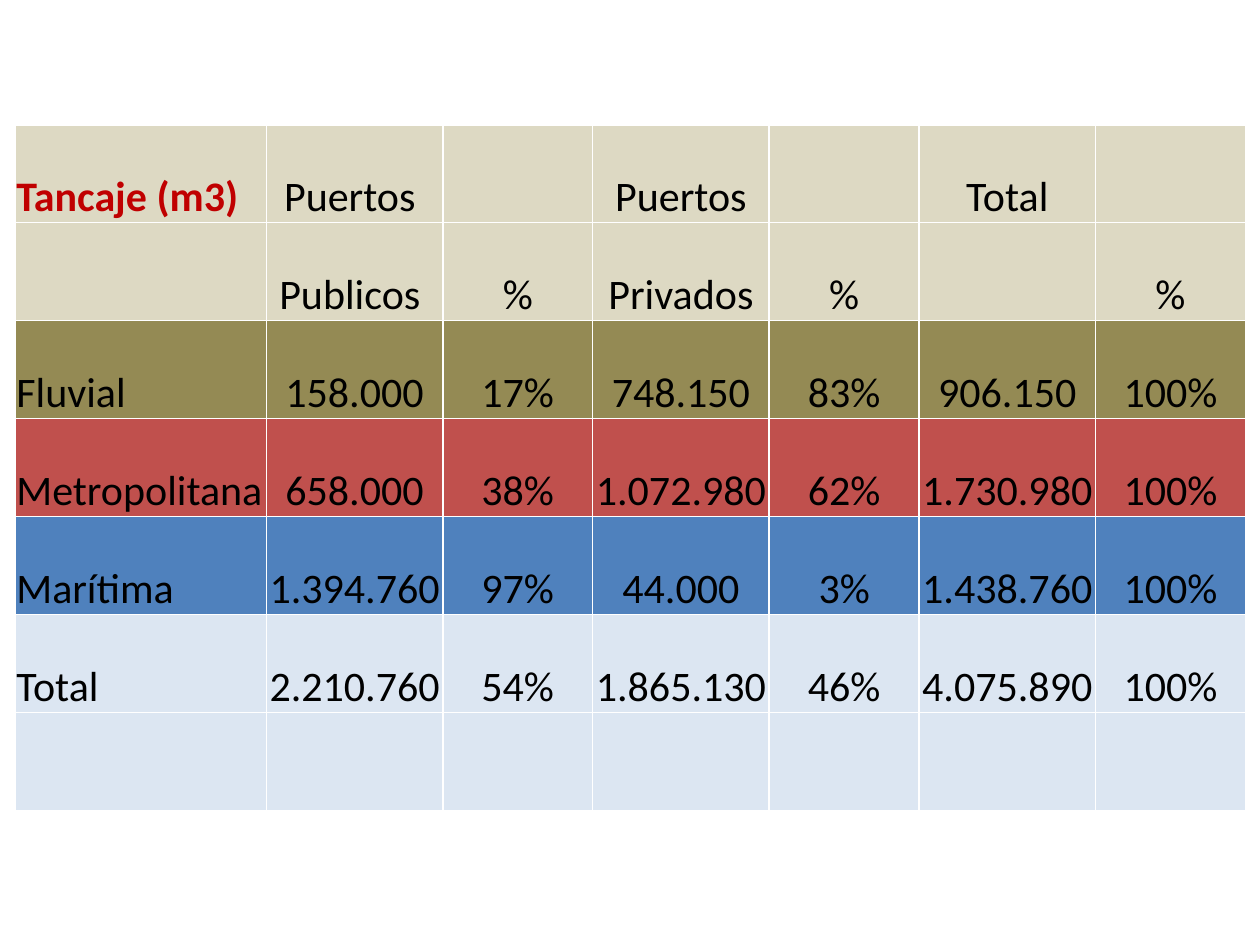
from dataclasses import dataclass

from lxml import etree
from pptx import Presentation
from pptx.dml.color import RGBColor
from pptx.enum.text import MSO_ANCHOR, PP_ALIGN
from pptx.oxml.ns import qn
from pptx.util import Pt

BOTTOM = MSO_ANCHOR.BOTTOM
LEFT = PP_ALIGN.LEFT
CENTER = PP_ALIGN.CENTER

BLANK_LAYOUT = 6
FONT_NAME = "Calibri"
FONT_SIZE = 24
WHITE = "FFFFFF"
BLACK = "000000"
RED = "C00000"
SAND = "DDD9C3"
PALE_BLUE = "DCE6F2"

TABLE_LEFT = 8.64
TABLE_TOP = 15.3
ROW_HEIGHT = 56
LABEL_WIDTH = 143.6
VALUE_WIDTH = 100.8
PERCENT_WIDTH = 85.7
COLUMN_WIDTHS = [LABEL_WIDTH] + [VALUE_WIDTH, PERCENT_WIDTH] * 3
CELL_MARGIN = 0.72
BORDER_WIDTH = 1


@dataclass
class TankRow:
    fill: str
    texts: tuple[str, ...] = ("",) * 7
    label_color: str = BLACK
    label_bold: bool = False


ROWS = [
    TankRow(WHITE),
    TankRow(SAND, ("Tancaje (m3)", "Puertos ", "", "Puertos", "", "Total", ""), RED, True),
    TankRow(SAND, ("", "Publicos ", "%", "Privados", "%", "", "%")),
    TankRow("948A54", ("Fluvial", "158.000", "17%", "748.150", "83%", "906.150", "100%")),
    TankRow("C0504D", ("Metropolitana", "658.000", "38%", "1.072.980", "62%", "1.730.980", "100%")),
    TankRow("4F81BD", ("Marítima", "1.394.760", "97%", "44.000", "3%", "1.438.760", "100%")),
    TankRow(PALE_BLUE, ("Total", "2.210.760", "54%", "1.865.130", "46%", "4.075.890", "100%")),
    TankRow(PALE_BLUE),
]


def rgb(color: str) -> RGBColor:
    return RGBColor.from_string(color)


def set_borders(cell, color: str) -> None:
    properties = cell._tc.get_or_add_tcPr()
    for position, side in enumerate(("a:lnL", "a:lnR", "a:lnT", "a:lnB")):
        line = etree.Element(qn(side), w=str(Pt(BORDER_WIDTH)))
        fill = etree.SubElement(line, qn("a:solidFill"))
        etree.SubElement(fill, qn("a:srgbClr"), val=color)
        properties.insert(position, line)


def format_cell(cell, text: str, fill: str, color: str, bold: bool, alignment: PP_ALIGN) -> None:
    cell.fill.solid()
    cell.fill.fore_color.rgb = rgb(fill)
    set_borders(cell, WHITE)
    cell.vertical_anchor = BOTTOM
    cell.margin_left = cell.margin_right = cell.margin_top = Pt(CELL_MARGIN)
    cell.margin_bottom = Pt(0)
    if not text:
        return
    cell.text_frame.text = text
    paragraph = cell.text_frame.paragraphs[0]
    paragraph.alignment = alignment
    font = paragraph.runs[0].font
    font.name = FONT_NAME
    font.size = Pt(FONT_SIZE)
    font.bold = bold
    font.color.rgb = rgb(color)


def add_tank_table(slide, rows: list[TankRow]) -> None:
    table = slide.shapes.add_table(
        len(rows), len(COLUMN_WIDTHS), Pt(TABLE_LEFT), Pt(TABLE_TOP),
        Pt(sum(COLUMN_WIDTHS)), Pt(ROW_HEIGHT * len(rows)),
    ).table
    table.first_row = False
    table.horz_banding = False
    for column, width in zip(table.columns, COLUMN_WIDTHS):
        column.width = Pt(width)
    for table_row, row in zip(table.rows, rows):
        table_row.height = Pt(ROW_HEIGHT)
        label, *values = table_row.cells
        format_cell(label, row.texts[0], row.fill, row.label_color, row.label_bold, LEFT)
        for cell, text in zip(values, row.texts[1:]):
            format_cell(cell, text, row.fill, BLACK, False, CENTER)


def main() -> None:
    presentation = Presentation()
    presentation.slide_width = Pt(720)
    presentation.slide_height = Pt(540)
    slide = presentation.slides.add_slide(presentation.slide_layouts[BLANK_LAYOUT])
    add_tank_table(slide, ROWS)
    presentation.save("out.pptx")


if __name__ == "__main__":
    main()
